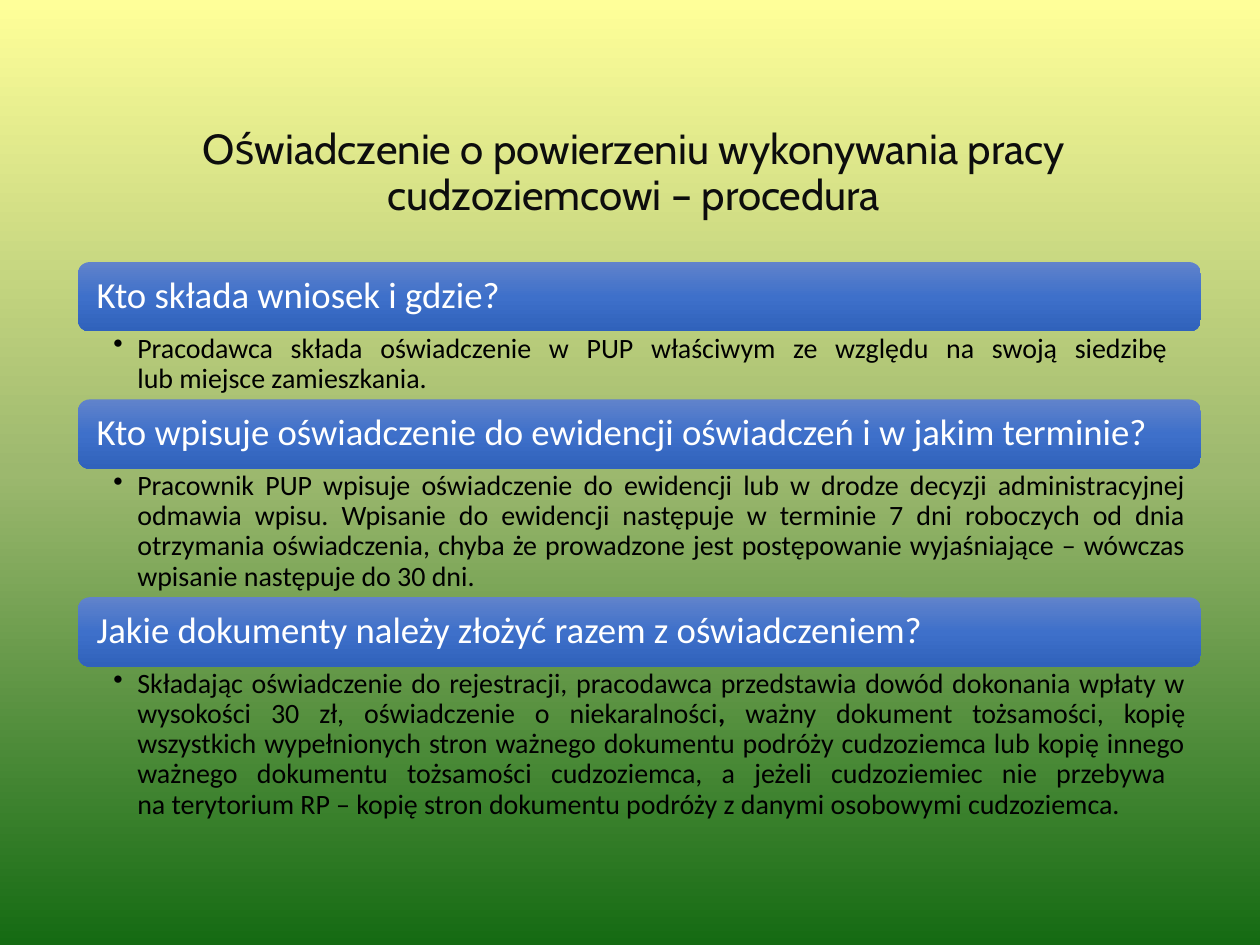
"""Builds a slide that explains the procedure of an employer's declaration."""
from copy import deepcopy
from dataclasses import dataclass

from lxml import etree
from pptx import Presentation
from pptx import util as u
from pptx.dml.color import RGBColor
from pptx.dml.fill import FillFormat
from pptx.enum import shapes, text
from pptx.oxml.ns import qn
from pptx.slide import Slide
from pptx.text.text import TextFrame

WIDTH, HEIGHT = 10, 7.5
LEFT, TOP, COLUMN = 0.62, 2.08, 8.91
BAR = 0.55
BULLET_INDENT = 0.19
BACKGROUND = ("FFFF99", "9CB86E", "156B13")
BAR_COLOURS = ("6183CB", "3E70CA", "3062BB")


@dataclass(frozen=True)
class Style:
    """Look of one kind of text."""
    font: str
    size: float
    colour: str
    align: text.PP_ALIGN
    anchor: text.MSO_ANCHOR
    insets: tuple[float, float, float, float]


@dataclass(frozen=True)
class Run:
    """Piece of text with one weight."""
    words: str
    bold: bool = False


Lines = tuple[tuple[Run, ...], ...]


@dataclass(frozen=True)
class Section:
    """Question in a bar and the answer below it."""
    question: str
    answer: Lines
    height: float


TITLE = Style("Cabin", 24, "0D0D0D", text.PP_ALIGN.CENTER,
              text.MSO_ANCHOR.BOTTOM, (0.1, 0.05, 0.1, 0.05))
QUESTION = Style("Calibri", 21, "FFFFFF", text.PP_ALIGN.LEFT,
                 text.MSO_ANCHOR.MIDDLE, (0.12, 0.09, 0.12, 0.09))
ANSWER = Style("Calibri", 16, "000000", text.PP_ALIGN.JUSTIFY,
               text.MSO_ANCHOR.TOP, (0.28, 0.02, 0.12, 0.02))

HEADLINE = "Oświadczenie o powierzeniu wykonywania pracy cudzoziemcowi – procedura"
SECTIONS = (
    Section(
        "Kto składa wniosek i gdzie?",
        ((Run("Pracodawca składa oświadczenie w PUP właściwym ze względu "
              "na swoją siedzibę "),),
         (Run("lub miejsce zamieszkania."),)),
        0.54),
    Section(
        "Kto wpisuje oświadczenie do ewidencji oświadczeń i w jakim terminie?",
        ((Run("Pracownik PUP wpisuje oświadczenie do ewidencji lub w drodze decyzji "
              "administracyjnej odmawia wpisu. Wpisanie do ewidencji następuje "
              "w terminie 7 dni roboczych od dnia otrzymania oświadczenia, chyba że "
              "prowadzone jest postępowanie wyjaśniające – wówczas wpisanie "
              "następuje do 30 dni."),),),
        1.02),
    Section(
        "Jakie dokumenty należy złożyć razem z oświadczeniem?",
        ((Run("Składając oświadczenie do rejestracji, pracodawca przedstawia dowód "
              "dokonania wpłaty w wysokości 30 zł, oświadczenie o niekaralności"),
          Run(",", bold=True),
          Run(" ważny dokument tożsamości, kopię wszystkich wypełnionych stron "
              "ważnego dokumentu podróży cudzoziemca lub kopię innego ważnego "
              "dokumentu tożsamości cudzoziemca, a jeżeli cudzoziemiec nie "
              "przebywa ")),
         (Run("na terytorium RP – kopię stron dokumentu podróży z danymi "
              "osobowymi cudzoziemca."),)),
        1.28),
)


def colour(value: str) -> RGBColor:
    """Turn a hex string into a colour."""
    return RGBColor.from_string(value)


def box(left: float, top: float, width: float, height: float) -> list[u.Inches]:
    """Turn inches into a position and a size."""
    return [u.Inches(value) for value in (left, top, width, height)]


def fill_downwards(fill: FillFormat, colours: tuple[str, str, str]) -> None:
    """Fill with three evenly spaced colours from top to bottom."""
    fill.gradient()
    fill.gradient_angle = 270
    first = fill.gradient_stops[0]._gs
    first.addnext(deepcopy(first))
    for index, (stop, value) in enumerate(zip(fill.gradient_stops, colours)):
        stop.position = index / 2
        stop.color.rgb = colour(value)


def write(frame: TextFrame, lines: Lines, style: Style, bullet: bool = False) -> None:
    """Write one paragraph, run by run."""
    frame.word_wrap = True
    frame.vertical_anchor = style.anchor
    (frame.margin_left, frame.margin_top,
     frame.margin_right, frame.margin_bottom) = box(*style.insets)
    paragraph = frame.paragraphs[0]
    paragraph.alignment = style.align
    paragraph.line_spacing = 0.9
    if bullet:
        properties = paragraph._p.get_or_add_pPr()
        properties.set("marL", str(u.Inches(BULLET_INDENT)))
        properties.set("indent", str(-u.Inches(BULLET_INDENT)))
        etree.SubElement(properties, qn("a:buChar")).set("char", "•")
    for index, line in enumerate(lines):
        if index:
            paragraph.add_line_break()
        for piece in line:
            run = paragraph.add_run()
            run.text = piece.words
            run.font.name = style.font
            run.font.size = u.Pt(style.size)
            run.font.bold = piece.bold
            run.font.color.rgb = colour(style.colour)


def draw_section(slide: Slide, section: Section, top: float) -> float:
    """Draw a bar with its answer and return where the next one starts."""
    bar = slide.shapes.add_shape(shapes.MSO_SHAPE.ROUNDED_RECTANGLE,
                                 *box(LEFT, top, COLUMN, BAR))
    bar.shadow.inherit = False
    bar.line.fill.background()
    fill_downwards(bar.fill, BAR_COLOURS)
    write(bar.text_frame, ((Run(section.question),),), QUESTION)
    answer = slide.shapes.add_textbox(*box(LEFT, top + BAR, COLUMN, section.height))
    write(answer.text_frame, section.answer, ANSWER, bullet=True)
    return top + BAR + section.height


def main() -> None:
    """Build the slide and save it."""
    presentation = Presentation()
    presentation.slide_width = u.Inches(WIDTH)
    presentation.slide_height = u.Inches(HEIGHT)
    slide = presentation.slides.add_slide(presentation.slide_layouts[6])
    fill_downwards(slide.background.fill, BACKGROUND)
    title = slide.shapes.add_textbox(*box(0.78, 0.62, 0.85 * WIDTH, 1.17))
    write(title.text_frame, ((Run(HEADLINE),),), TITLE)
    top = TOP
    for section in SECTIONS:
        top = draw_section(slide, section, top)
    presentation.save("out.pptx")


if __name__ == "__main__":
    main()
